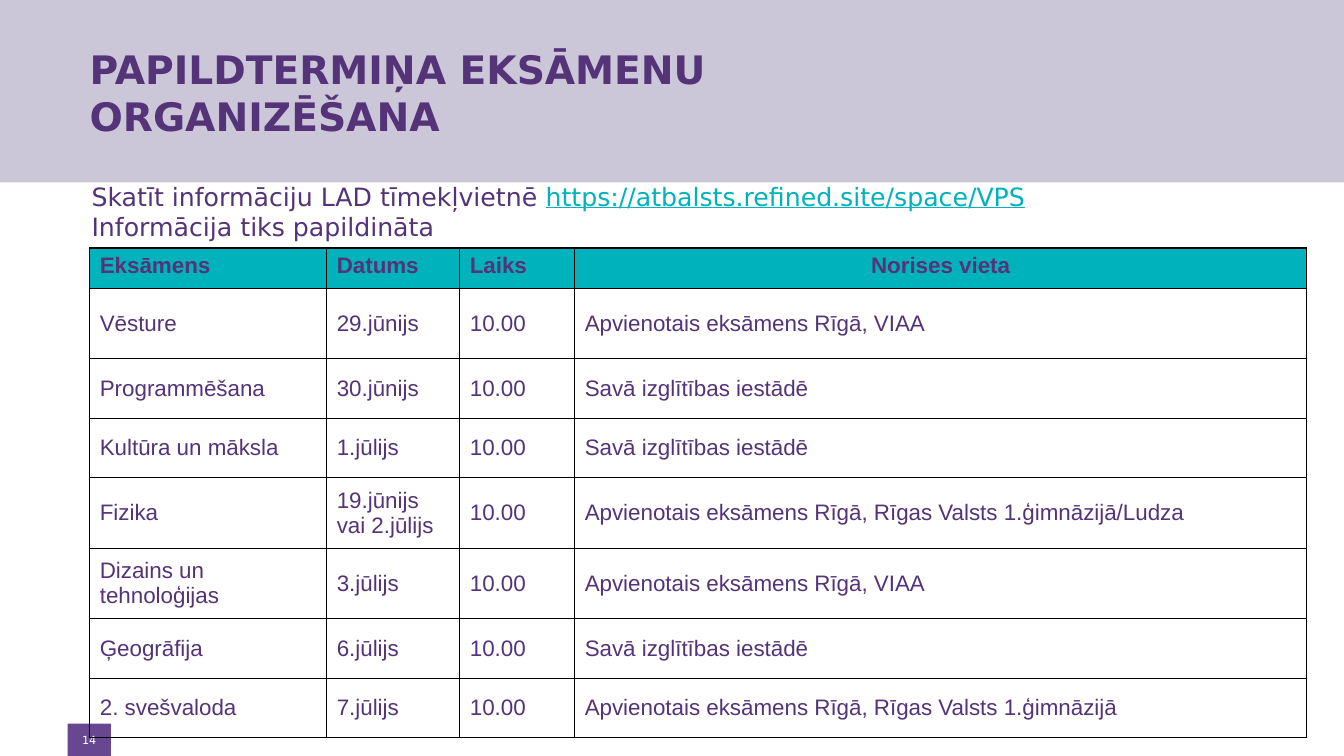
from dataclasses import dataclass

from lxml.etree import SubElement
from pptx import Presentation
from pptx.dml.color import RGBColor
from pptx.enum.shapes import MSO_SHAPE
from pptx.enum.text import MSO_ANCHOR, PP_ALIGN
from pptx.oxml.ns import qn
from pptx.util import Inches, Pt


@dataclass(frozen=True)
class Theme:
    """Colours, fonts and type sizes of the slide."""
    band: str = "CBC7D8"
    badge: str = "664790"
    text: str = "543378"
    accent: str = "00B2BB"
    light: str = "FFFFFF"
    border: str = "000000"
    heading_font: str = "DejaVu Sans"
    table_font: str = "Arial"
    title_size: int = 28
    intro_size: int = 18
    table_size: int = 16
    number_size: int = 8
    border_width: int = 1


THEME = Theme()
LINE_BREAK = "\v"
COLUMN_WIDTHS = (2.35, 1.32, 1.14, 7.26)
ROW_HEIGHTS = (0.4, 0.7, 0.59, 0.59, 0.7, 0.7, 0.59, 0.59)
HEADERS = ("Eksāmens", "Datums", "Laiks", "Norises vieta")
START_TIME = "10.00"
OWN_SCHOOL = "Savā izglītības iestādē"
JOINT_EXAM = "Apvienotais eksāmens Rīgā, "
EXAMS = (
    ("Vēsture", "29.jūnijs", JOINT_EXAM + "VIAA"),
    ("Programmēšana", "30.jūnijs", OWN_SCHOOL),
    ("Kultūra un māksla", "1.jūlijs", OWN_SCHOOL),
    ("Fizika", "19.jūnijs vai 2.jūlijs", JOINT_EXAM + "Rīgas Valsts 1.ģimnāzijā/Ludza"),
    ("Dizains un tehnoloģijas", "3.jūlijs", JOINT_EXAM + "VIAA"),
    ("Ģeogrāfija", "6.jūlijs", OWN_SCHOOL),
    ("2. svešvaloda", "7.jūlijs", JOINT_EXAM + "Rīgas Valsts 1.ģimnāzijā"),
)


def apply_format(target, values):
    """Set each named attribute on the target."""
    for name, value in values.items():
        setattr(target, name, value)


def font_format(size, name=THEME.heading_font, **extra):
    """Return the format values of a font."""
    return {"size": Pt(size), "name": name, **extra}


def add_run(paragraph, text, font_values, color=THEME.text):
    """Add a formatted run, or a line break."""
    if text == LINE_BREAK:
        paragraph.add_line_break()
        return
    run = paragraph.add_run()
    run.text = text
    apply_format(run.font, font_values)
    run.font.color.rgb = RGBColor.from_string(color)


def set_margins(frame, left, top, right, bottom):
    """Set the four inner margins of a text frame."""
    apply_format(frame, {
        "margin_left": Inches(left), "margin_top": Inches(top),
        "margin_right": Inches(right), "margin_bottom": Inches(bottom),
    })


def add_rectangle(slide, box, color):
    """Add a plain filled rectangle."""
    shape = slide.shapes.add_shape(MSO_SHAPE.RECTANGLE, *map(Inches, box))
    shape.shadow.inherit = False
    shape.fill.solid()
    shape.fill.fore_color.rgb = RGBColor.from_string(color)
    shape.line.fill.background()
    return shape


def add_title(slide):
    """Add the two-line slide title."""
    frame = slide.shapes.add_textbox(*map(Inches, (0.89, 0.29, 10.67, 1.25))).text_frame
    apply_format(frame, {"word_wrap": True, "vertical_anchor": MSO_ANCHOR.MIDDLE})
    set_margins(frame, 0, 0.05, 0.1, 0.05)
    for text in ("PAPILDTERMIŅA EKSĀMENU", LINE_BREAK, "ORGANIZĒŠANA"):
        add_run(frame.paragraphs[0], text, font_format(THEME.title_size, bold=True))


def add_intro(slide):
    """Add the two lines that point to the web address."""
    frame = slide.shapes.add_textbox(*map(Inches, (0.81, 1.75, 9.92, 0.71))).text_frame
    frame.word_wrap = False
    values = font_format(THEME.intro_size)
    paragraph = frame.paragraphs[0]
    add_run(paragraph, "Skatīt informāciju LAD tīmekļvietnē ", values)
    add_run(paragraph, "https://atbalsts.refined.site/space/VPS",
            {**values, "underline": True}, THEME.accent)
    add_run(frame.add_paragraph(), "Informācija tiks papildināta", values)


def add_page_number(slide):
    """Add the badge with the page number."""
    frame = add_rectangle(slide, (0.67, 7.18, 0.43, 0.32), THEME.badge).text_frame
    frame.vertical_anchor = MSO_ANCHOR.MIDDLE
    set_margins(frame, 0.04, 0.04, 0.04, 0.04)
    paragraph = frame.paragraphs[0]
    paragraph.alignment = PP_ALIGN.CENTER
    add_run(paragraph, "14", font_format(THEME.number_size), THEME.light)


def add_borders(cell):
    """Draw a solid line on each side of a cell."""
    properties = cell._tc.get_or_add_tcPr()
    for side in ("a:lnL", "a:lnR", "a:lnT", "a:lnB"):
        line = SubElement(properties, qn(side), w=str(Pt(THEME.border_width)))
        fill = SubElement(line, qn("a:solidFill"))
        SubElement(fill, qn("a:srgbClr"), val=THEME.border)


def fill_cell(cell, text, is_header, alignment):
    """Write and format one table cell."""
    cell.vertical_anchor = MSO_ANCHOR.TOP if is_header else MSO_ANCHOR.MIDDLE
    set_margins(cell, 0.1, 0.05, 0.1, 0.05)
    add_borders(cell)
    if is_header:
        cell.fill.solid()
        cell.fill.fore_color.rgb = RGBColor.from_string(THEME.accent)
    else:
        cell.fill.background()
    paragraph = cell.text_frame.paragraphs[0]
    paragraph.alignment = alignment
    add_run(paragraph, text, font_format(THEME.table_size, THEME.table_font, bold=is_header))


def add_exam_table(slide):
    """Add the timetable of exams."""
    rows = [HEADERS] + [(exam, date, START_TIME, place) for exam, date, place in EXAMS]
    box = (0.89, 2.46, sum(COLUMN_WIDTHS), sum(ROW_HEIGHTS))
    table = slide.shapes.add_table(len(rows), len(HEADERS), *map(Inches, box)).table
    apply_format(table, {"first_row": False, "horz_banding": False})
    for column, width in zip(table.columns, COLUMN_WIDTHS):
        column.width = Inches(width)
    for row, height in zip(table.rows, ROW_HEIGHTS):
        row.height = Inches(height)
    for row_index, texts in enumerate(rows):
        for column_index, text in enumerate(texts):
            is_header = row_index == 0
            centred = is_header and column_index == len(HEADERS) - 1
            fill_cell(table.cell(row_index, column_index), text, is_header,
                      PP_ALIGN.CENTER if centred else PP_ALIGN.LEFT)


def main():
    """Build and save the slide."""
    presentation = Presentation()
    apply_format(presentation, {"slide_width": Inches(13.33), "slide_height": Inches(7.5)})
    slide = presentation.slides.add_slide(presentation.slide_layouts[6])
    add_rectangle(slide, (0, 0, 13.33, 1.81), THEME.band)
    add_page_number(slide)
    add_title(slide)
    add_intro(slide)
    add_exam_table(slide)
    presentation.save("out.pptx")


if __name__ == "__main__":
    main()
